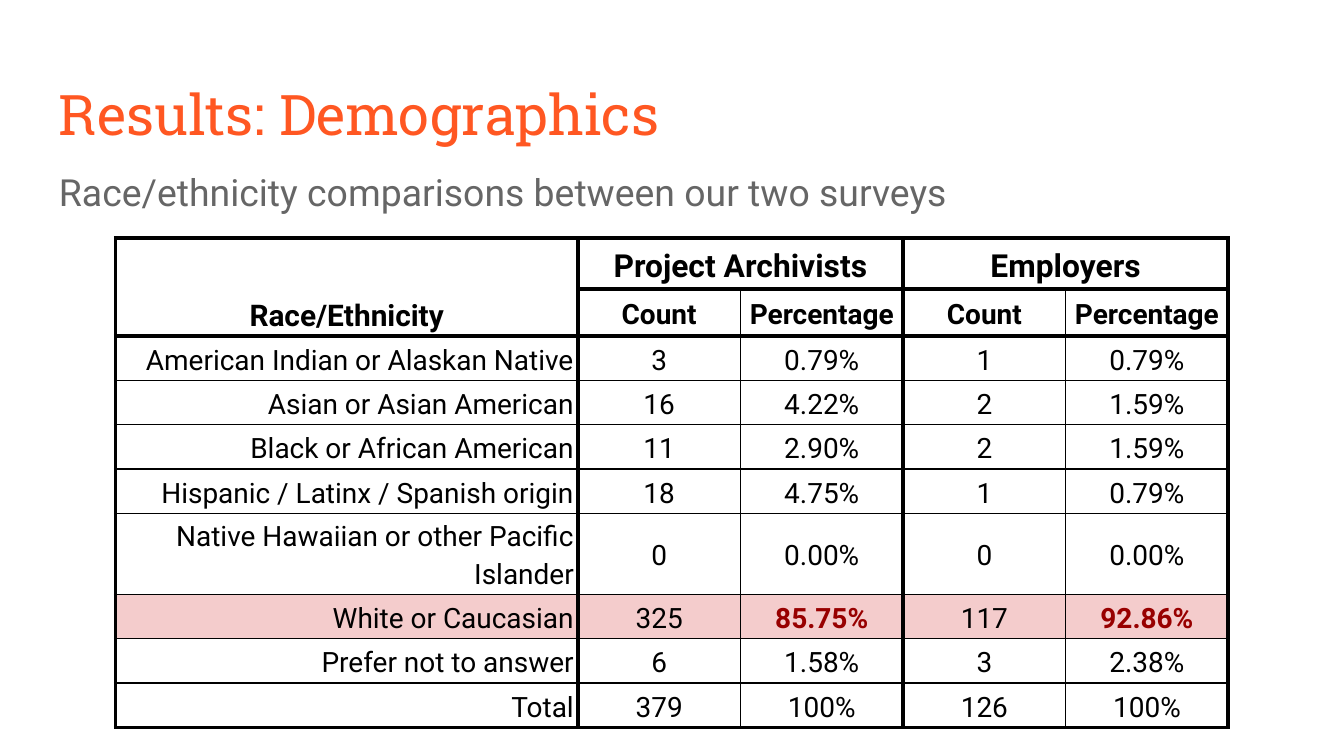
from dataclasses import dataclass

from lxml import etree
from pptx import Presentation
from pptx.dml.color import RGBColor
from pptx.enum import text as t
from pptx.oxml import ns
from pptx.util import Inches, Pt


@dataclass(frozen=True)
class Theme:
    head: str = "Roboto Slab"
    body: str = "Roboto"
    orange: str = "FF5722"
    gray: str = "666666"
    black: str = "000000"
    pink: str = "F4CCCC"
    red: str = "980000"
    title: int = 30
    sub: int = 20
    group: int = 17
    label: int = 16
    cell: int = 15
    thick: float = 2.25
    thin: float = 0.75


THEME = Theme()
LEFT, MID, RIGHT = t.PP_ALIGN.LEFT, t.PP_ALIGN.CENTER, t.PP_ALIGN.RIGHT

GROUPS = ["Project Archivists", "Employers"]
FIELDS = ["Count", "Percentage"]
ROWS = [
    ("American Indian or Alaskan Native", "3", "0.79%", "1", "0.79%"),
    ("Asian or Asian American", "16", "4.22%", "2", "1.59%"),
    ("Black or African American", "11", "2.90%", "2", "1.59%"),
    ("Hispanic / Latinx / Spanish origin", "18", "4.75%", "1", "0.79%"),
    ("Native Hawaiian or other Pacific Islander", "0", "0.00%", "0", "0.00%"),
    ("White or Caucasian", "325", "85.75%", "117", "92.86%"),
    ("Prefer not to answer", "6", "1.58%", "3", "2.38%"),
    ("Total", "379", "100%", "126", "100%"),
]
PEAK = "White or Caucasian"


def write(frame, words, size, color, font=THEME.body, bold=False,
          align=LEFT, space=1.0):
    par = frame.paragraphs[0]
    par.alignment = align
    par.line_spacing = space
    run = par.add_run()
    run.text = words
    run.font.name = font
    run.font.size = Pt(size)
    run.font.bold = bold
    run.font.color.rgb = RGBColor.from_string(color)


def add_line(slide, box, words, size, color, **style):
    """Place one line of text in a box of left, top, width and height."""
    frame = slide.shapes.add_textbox(*map(Inches, box)).text_frame
    frame.word_wrap = True
    frame.margin_left = frame.margin_right = Inches(0.1)
    frame.margin_top = frame.margin_bottom = Inches(0.1)
    write(frame, words, size, color, **style)


def set_edges(cell, row, col, last):
    """Rule heavy lines around the header rows and each column group."""
    heavy_x, heavy_y = {0, 1, 3, 5}, {0, 1, 2, last + 1}
    edges = {
        "lnL": row == 0 or col in heavy_x,
        "lnR": row == 0 or col + 1 in heavy_x,
        "lnT": row in heavy_y,
        "lnB": row + 1 in heavy_y,
    }
    props = cell._tc.get_or_add_tcPr()
    for spot, (name, heavy) in enumerate(edges.items()):
        width = THEME.thick if heavy else THEME.thin
        line = etree.Element(ns.qn("a:" + name), w=str(Pt(width)))
        fill = etree.SubElement(line, ns.qn("a:solidFill"))
        etree.SubElement(fill, ns.qn("a:srgbClr"), val=THEME.black)
        props.insert(spot, line)


def fill_cell(cell, words, size=THEME.cell, color=THEME.black, bold=False,
              align=MID, anchor=t.MSO_ANCHOR.MIDDLE):
    cell.vertical_anchor = anchor
    write(cell.text_frame, words, size, color, bold=bold, align=align,
          space=1.15)


def add_grid(slide, box):
    left, top, width, height = box
    heights = [0.38, 0.35] + [0.33] * len(ROWS)
    count = 1 + len(GROUPS) * len(FIELDS)
    first = 3.44
    widths = [first] + [(width - first) / (count - 1)] * (count - 1)
    grid = slide.shapes.add_table(
        len(heights), count, Inches(left), Inches(top),
        Inches(width), Inches(height)).table
    grid.first_row = grid.horz_banding = False
    for part, size in zip(grid.columns, widths):
        part.width = Inches(size)
    for part, size in zip(grid.rows, heights):
        part.height = Inches(size)

    for row in range(len(heights)):
        peak = row > 1 and ROWS[row - 2][0] == PEAK
        for col in range(count):
            cell = grid.cell(row, col)
            cell.margin_left = cell.margin_right = Inches(0.03)
            cell.margin_top = cell.margin_bottom = Inches(0.02)
            if peak:
                cell.fill.solid()
                cell.fill.fore_color.rgb = RGBColor.from_string(THEME.pink)
            else:
                cell.fill.background()
            set_edges(cell, row, col, len(heights) - 1)

    grid.cell(0, 0).merge(grid.cell(1, 0))
    fill_cell(grid.cell(0, 0), "Race/Ethnicity", THEME.label, bold=True,
              anchor=t.MSO_ANCHOR.BOTTOM)
    for spot, group in enumerate(GROUPS):
        col = 1 + spot * len(FIELDS)
        grid.cell(0, col).merge(grid.cell(0, col + len(FIELDS) - 1))
        fill_cell(grid.cell(0, col), group, THEME.group, bold=True)
        for step, field in enumerate(FIELDS):
            fill_cell(grid.cell(1, col + step), field, bold=True)

    for row, values in enumerate(ROWS, 2):
        for col, words in enumerate(values):
            strong = values[0] == PEAK and words.endswith("%")
            fill_cell(grid.cell(row, col), words, bold=strong,
                      color=THEME.red if strong else THEME.black,
                      align=MID if col else RIGHT)


def add_results(deck):
    slide = deck.slides.add_slide(deck.slide_layouts[6])
    add_grid(slide, (0.86, 1.77, 8.28, 3.37))
    add_line(slide, (0.34, 0.49, 9.32, 0.63), "Results: Demographics",
             THEME.title, THEME.orange, font=THEME.head)
    add_line(slide, (0.34, 1.11, 9.32, 0.51),
             "Race/ethnicity comparisons between our two surveys",
             THEME.sub, THEME.gray, space=1.15)


def main():
    deck = Presentation()
    deck.slide_width = Inches(10)
    deck.slide_height = deck.slide_width * 9 // 16
    add_results(deck)
    deck.save("out.pptx")


if __name__ == "__main__":
    main()
